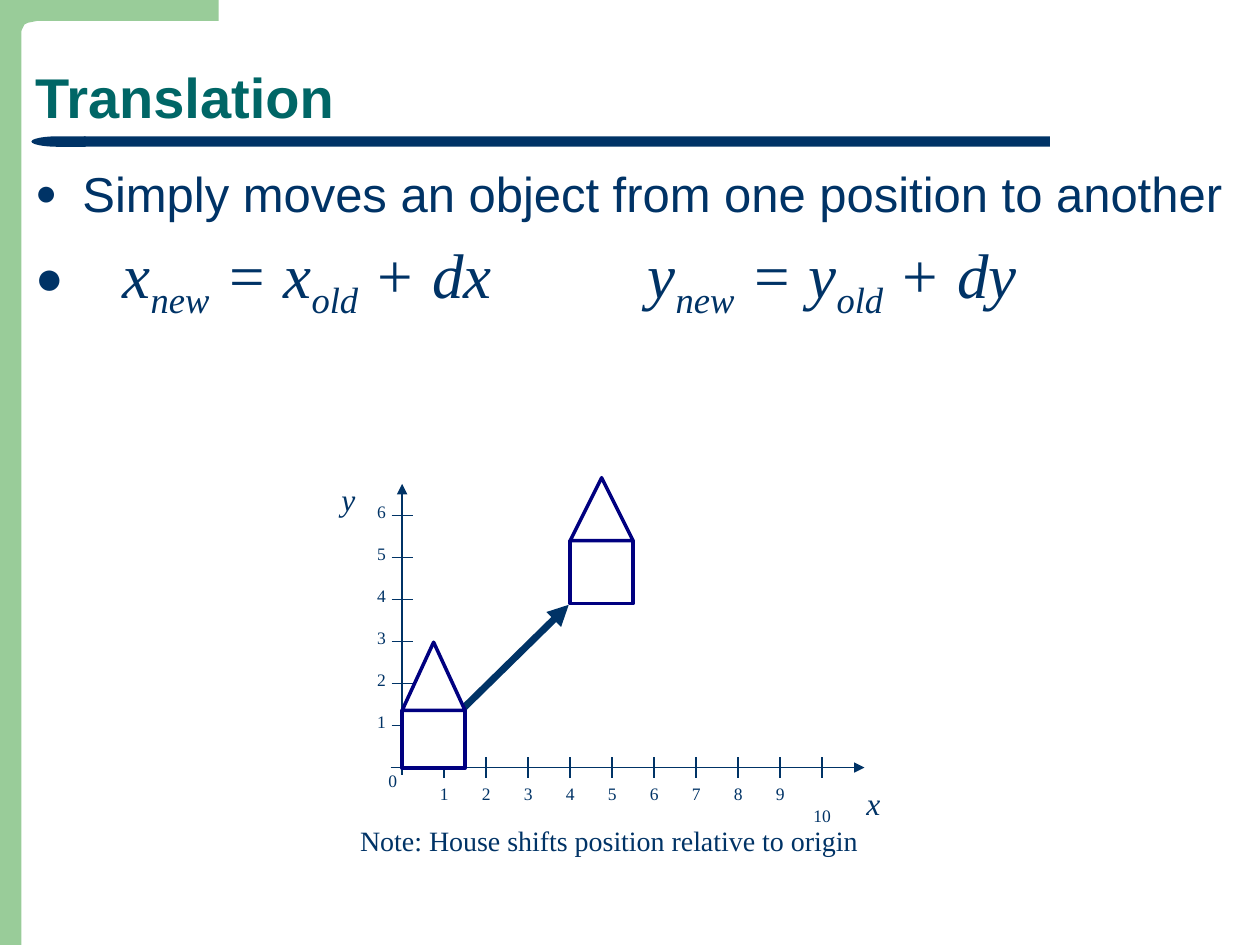
"""Build the slide that explains translation of a house on a grid."""
from lxml import etree
from pptx import Presentation
from pptx.dml.color import RGBColor
from pptx.enum.shapes import MSO_CONNECTOR, MSO_SHAPE
from pptx.enum.text import MSO_ANCHOR
from pptx.oxml.ns import qn
from pptx.util import Pt

RECT = MSO_SHAPE.RECTANGLE
ROOF = MSO_SHAPE.ISOSCELES_TRIANGLE
DELAY = MSO_SHAPE.FLOWCHART_DELAY
LINE = MSO_CONNECTOR.STRAIGHT
TOP, BASE = MSO_ANCHOR.TOP, MSO_ANCHOR.BOTTOM

HUES = {"ink": "003366", "green": "99CC99", "teal": "006666",
        "navy": "000080", "white": "FFFFFF"}
SANS, SERIF = "Arial", "Times New Roman"


def hue(name):
    """Return the named colour."""
    return RGBColor.from_string(HUES[name])


def add(node, tag, **attrs):
    """Append a drawing element to a node."""
    return etree.SubElement(node, qn(tag), attrs)


class Deck:
    """Hold the style and the slide being drawn."""

    def __init__(self, wide, high):
        """Start a blank slide of the given size."""
        self.prs = Presentation()
        self.prs.slide_width, self.prs.slide_height = Pt(wide), Pt(high)
        self.slide = self.prs.slides.add_slide(self.prs.slide_layouts[6])
        self.shapes = self.slide.shapes

    def paint(self, shape, fill, line=None):
        """Set fill and outline and drop the shadow."""
        shape.shadow.inherit = False
        shape.fill.solid()
        shape.fill.fore_color.rgb = hue(fill)
        if line:
            shape.line.color.rgb = hue(line)
            shape.line.width = Pt(2)
        else:
            shape.line.fill.background()

    def shape(self, kind, box, fill, line=None):
        """Add a preset shape."""
        shape = self.shapes.add_shape(kind, *map(Pt, box))
        self.paint(shape, fill, line)
        return shape

    def free(self, points, fill):
        """Add a closed outline through the points."""
        pen = self.shapes.build_freeform(*points[0], scale=Pt(1))
        pen.add_line_segments(points[1:], close=True)
        self.paint(pen.convert_to_shape(), fill)

    def line(self, start, end, width=0.75, arrow=False):
        """Add a straight line, with an arrowhead if asked."""
        line = self.shapes.add_connector(LINE, *map(Pt, start + end))
        line.line.color.rgb = hue("ink")
        line.line.width = Pt(width)
        if arrow:
            add(line.line._get_or_add_ln(), "a:tailEnd", type="triangle")
        add(line._element.spPr, "a:effectLst")

    def text(self, box, wrap=True, anchor=TOP):
        """Add a text box and return its frame."""
        frame = self.shapes.add_textbox(*map(Pt, box)).text_frame
        frame.word_wrap = wrap
        frame.vertical_anchor = anchor
        return frame

    def run(self, para, text, size, face=SERIF, color="ink",
            bold=False, slant=False, sub=False):
        """Add one run of text."""
        run = para.add_run()
        run.text = text
        font = run.font
        font.size, font.name = Pt(size), face
        font.bold, font.italic = bold, slant
        font.color.rgb = hue(color)
        if sub:
            run._r.get_or_add_rPr().set("baseline", "-25000")

    def label(self, box, text, size, wrap=True, **style):
        """Add a text box with a single run."""
        frame = self.text(box, wrap)
        self.run(frame.paragraphs[0], text, size, **style)

    def bullet(self, para, tabs=()):
        """Give a paragraph its bullet, hanging indent and tab stops."""
        props = para._p.get_or_add_pPr()
        props.set("marL", str(Pt(27)))
        props.set("indent", str(-Pt(27)))
        add(add(props, "a:buClr"), "a:srgbClr", val=HUES["ink"])
        add(props, "a:buSzPct", val="75000")
        add(props, "a:buFont", typeface=SANS)
        add(props, "a:buChar", char="●")
        if tabs:
            stops = add(props, "a:tabLst")
            for stop in tabs:
                add(stops, "a:tab", pos=str(Pt(stop)), algn="l")

    def house(self, left, top, roof, wall):
        """Add a house as a square wall under a roof."""
        self.shape(RECT, (left, top + roof, 36, wall), "white", "navy")
        self.shape(ROOF, (left, top, 36, roof), "white", "navy")


def frame(deck):
    """Draw the corner, the rule and the title."""
    deck.shape(RECT, (0, 0, 12.24, 540), "green")
    deck.free([(0, 0), (125, 0), (125, 11.6), (25, 11.6), (21, 12),
               (16.5, 13), (14, 14.5), (12.8, 16), (12.4, 18), (0, 18)],
              "green")
    deck.shape(RECT, (48, 77.9, 552, 6), "ink")
    tip = deck.shape(DELAY, (18, 77.9, 31, 6), "ink")
    tip._element.spPr.find(qn("a:xfrm")).set("flipH", "1")
    para = deck.text((13, 12.2, 695.5, 66), anchor=BASE).paragraphs[0]
    para.line_spacing = 0.9
    deck.run(para, "Translation", 32, SANS, "teal", bold=True)


def body(deck):
    """Write the bullet and the two formulas."""
    text = deck.text((13, 90, 702, 421.5))
    first, second = text.paragraphs[0], text.add_paragraph()
    deck.bullet(first)
    deck.run(first, "Simply moves an object from one position to another",
             28, SANS)
    deck.bullet(second, (50, 288, 350))
    second.space_before = Pt(7.2)
    parts = ("\tx", "new", " = x", "old", " + dx\t\ty",
             "new", " = y", "old", " + dy")
    for i, part in enumerate(parts):
        deck.run(second, part, 36, slant=True, sub=i % 2 == 1)


def graph(deck):
    """Draw the axes, their ticks and numbers, and both houses."""
    left, base, step = 229.8, 438.6, 24
    deck.label((198.7, 467.3, 333.4, 26.6),
               "Note: House shifts position relative to origin", 16)
    deck.label((188, 270.7, 24, 29), "y", 18, slant=True)
    deck.label((488, 444.2, 24, 29), "x", 18, slant=True)
    deck.line((left, 442.8), (left, 276.5), arrow=True)
    deck.line((223.2, base), (494, base), arrow=True)
    deck.label((212.4, 436.3, 22.3, 19.4), " 0", 10, False)
    for n in range(1, 11):
        x = left + n * step
        deck.line((x, base - 6), (x, base + 6))
        wide = 22.3 if n < 10 else 26.6
        deck.label((x - 12, 444.2, wide, 19.4), f" {n}", 10, False)
    for n in range(1, 7):
        y = base - n * step
        deck.line((left - 6, y), (left + 6, y))
        deck.label((206, y - 12, 22.3, 19.4), f" {n}", 10, False)
    deck.house(left + 4 * step, 273, 36, 36)
    deck.line((263.5, 406), (325, 345.6), 4, True)
    deck.house(left, 367, 39, 33)


def main():
    """Build and save the slide."""
    deck = Deck(720, 540)
    frame(deck)
    body(deck)
    graph(deck)
    deck.prs.save("out.pptx")


if __name__ == "__main__":
    main()
